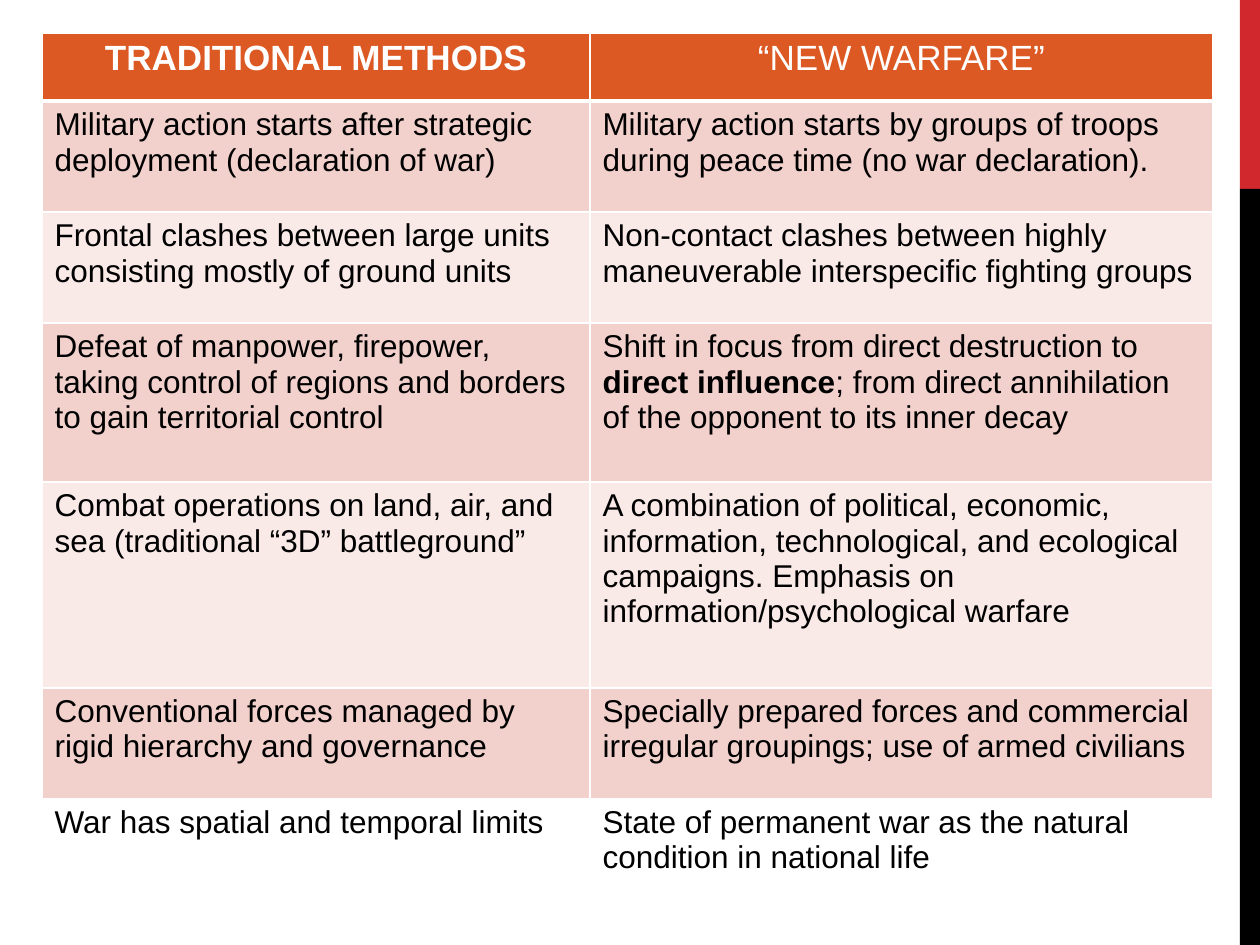
from dataclasses import dataclass

from lxml import etree
from pptx import Presentation
from pptx.dml.color import RGBColor
from pptx.enum.shapes import MSO_SHAPE
from pptx.enum.text import PP_ALIGN
from pptx.oxml.ns import qn
from pptx.util import Pt

RECTANGLE = MSO_SHAPE.RECTANGLE
CENTER, LEFT = PP_ALIGN.CENTER, PP_ALIGN.LEFT
EMU_PER_PX = 914400 // 126
FONT = "Arial"
COLORS = {
    "white": "FFFFFF",
    "black": "000000",
    "red": "D1282E",
    "orange": "DC5924",
    "rose": "F2D1CD",
    "blush": "F9EAE8",
}


@dataclass(frozen=True)
class Band:
    top: int
    height: int
    color: str


@dataclass(frozen=True)
class Run:
    text: str
    bold: bool = False


@dataclass(frozen=True)
class Comparison:
    height: int
    fill: str
    traditional: list[Run]
    modern: list[Run]


SIDE_BANDS = [Band(0, 189, "red"), Band(189, 756, "black")]
COLUMN_WIDTHS = [548, 623]
COMPARISONS = [
    Comparison(68, "orange", [Run("TRADITIONAL METHODS", True)], [Run("“NEW WARFARE”")]),
    Comparison(
        111, "rose",
        [Run("Military action starts after strategic deployment (declaration of war)")],
        [Run("Military action starts by groups of troops during peace time (no war declaration).")],
    ),
    Comparison(
        111, "blush",
        [Run("Frontal clashes between large units consisting mostly of ground units")],
        [Run("Non-contact clashes between highly maneuverable interspecific fighting groups")],
    ),
    Comparison(
        159, "rose",
        [Run("Defeat of manpower, firepower, taking control of regions and borders "
             "to gain territorial control")],
        [Run("Shift in focus from direct destruction to "),
         Run("direct influence", True),
         Run("; from direct annihilation of the opponent to its inner decay")],
    ),
    Comparison(
        206, "blush",
        [Run("Combat operations on land, air, and sea (traditional “3D” battleground”")],
        [Run("A combination of political, economic, information, technological, and ecological "
             "campaigns. Emphasis on information/psychological warfare")],
    ),
    Comparison(
        111, "rose",
        [Run("Conventional forces managed by rigid hierarchy and governance")],
        [Run("Specially prepared forces and commercial irregular groupings; use of armed civilians")],
    ),
    Comparison(
        111, "white",
        [Run("War has spatial and temporal limits")],
        [Run("State of permanent war as the natural condition in national life")],
    ),
]


def px(length: int) -> int:
    return length * EMU_PER_PX


def rgb(color: str) -> RGBColor:
    return RGBColor.from_string(COLORS[color])


def draw_band(slide, band: Band) -> None:
    strip = slide.shapes.add_shape(RECTANGLE, px(1240), px(band.top), px(20), px(band.height))
    strip.shadow.inherit = False
    strip.fill.solid()
    strip.fill.fore_color.rgb = rgb(band.color)
    strip.line.fill.background()


def draw_borders(cell, is_header: bool) -> None:
    properties = cell._tc.get_or_add_tcPr()
    for side in ("lnL", "lnR", "lnT", "lnB"):
        points = 3 if is_header and side == "lnB" else 1
        border = etree.SubElement(properties, qn(f"a:{side}"), w=str(Pt(points)))
        paint = etree.SubElement(border, qn("a:solidFill"))
        etree.SubElement(paint, qn("a:srgbClr"), val=COLORS["white"])


def fill_cell(cell, runs: list[Run], fill: str, is_header: bool) -> None:
    draw_borders(cell, is_header)
    cell.fill.solid()
    cell.fill.fore_color.rgb = rgb(fill)
    paragraph = cell.text_frame.paragraphs[0]
    paragraph.alignment = CENTER if is_header else LEFT
    for part in runs:
        run = paragraph.add_run()
        run.text = part.text
        text_format = {"name": FONT, "size": Pt(20 if is_header else 18), "bold": part.bold}
        for attribute, value in text_format.items():
            setattr(run.font, attribute, value)
        run.font.color.rgb = rgb("white" if is_header else "black")


def draw_comparisons(slide, comparisons: list[Comparison]) -> None:
    total_height = sum(comparison.height for comparison in comparisons)
    table = slide.shapes.add_table(
        len(comparisons), len(COLUMN_WIDTHS),
        px(42), px(33), px(sum(COLUMN_WIDTHS)), px(total_height),
    ).table
    for column, width in zip(table.columns, COLUMN_WIDTHS):
        column.width = px(width)
    for index, comparison in enumerate(comparisons):
        table.rows[index].height = px(comparison.height)
        for side, runs in enumerate((comparison.traditional, comparison.modern)):
            fill_cell(table.cell(index, side), runs, comparison.fill, index == 0)


def main() -> None:
    presentation = Presentation()
    presentation.slide_width = px(1260)
    presentation.slide_height = px(945)
    slide = presentation.slides.add_slide(presentation.slide_layouts[6])
    for band in SIDE_BANDS:
        draw_band(slide, band)
    draw_comparisons(slide, COMPARISONS)
    presentation.save("out.pptx")


if __name__ == "__main__":
    main()
